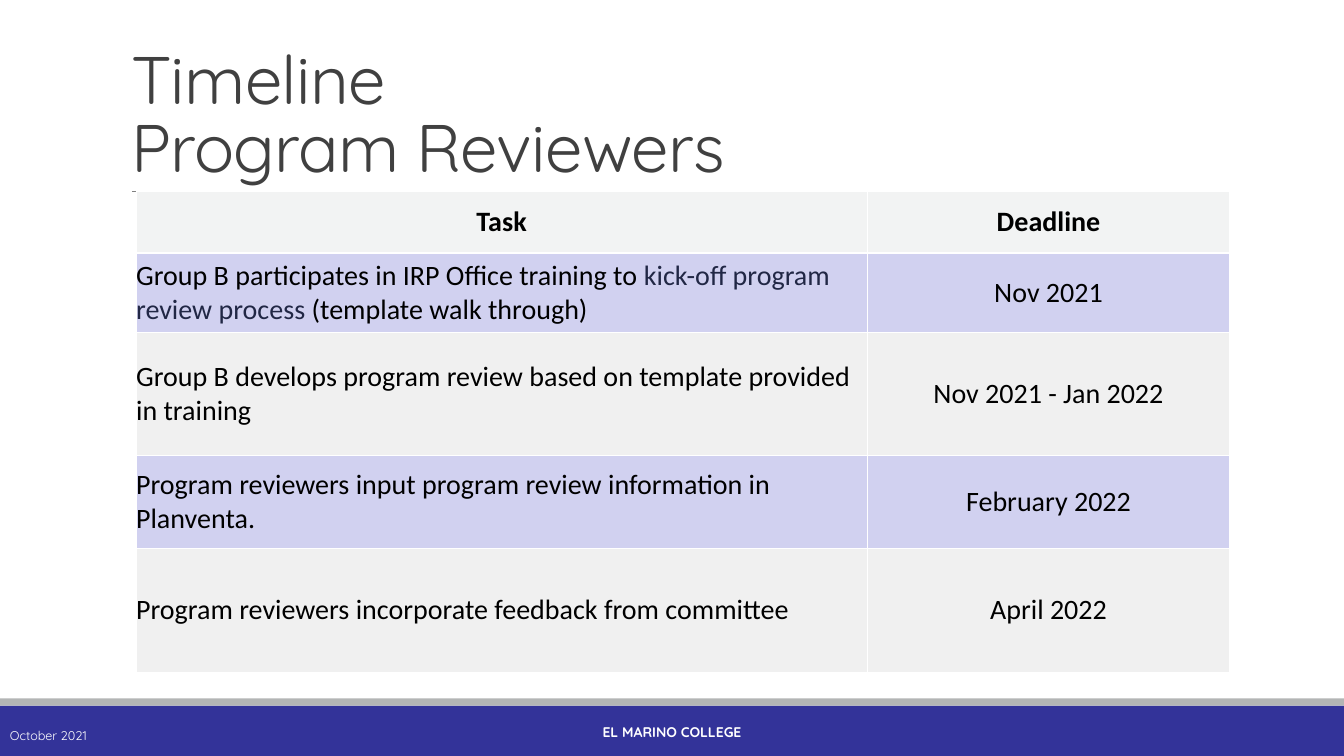
from lxml import etree
from pptx import Presentation
from pptx.dml.color import RGBColor
from pptx.enum import shapes, text
from pptx.oxml import ns
from pptx.util import Inches, Pt

BLACK = RGBColor(0x00, 0x00, 0x00)
WHITE = RGBColor(0xFF, 0xFF, 0xFF)
NAVY = RGBColor(0x21, 0x27, 0x45)
INDIGO = RGBColor(0x33, 0x33, 0x99)
SILVER = RGBColor(0xB3, 0xB5, 0xB5)
GRAY = RGBColor(0x80, 0x80, 0x80)
CHARCOAL = RGBColor(0x40, 0x40, 0x40)
HEADER = RGBColor(0xF2, 0xF3, 0xF3)
LILAC = RGBColor(0xD1, 0xD1, 0xF0)
PALE = RGBColor(0xF0, 0xF0, 0xF0)

CENTER = text.PP_ALIGN.CENTER
LEFT = text.PP_ALIGN.LEFT
MIDDLE = text.MSO_ANCHOR.MIDDLE

TITLE = "Timeline\vProgram Reviewers"
BANDS = [((0, 7, 13.33, 0.5), INDIGO), ((0, 6.93, 13.33, 0.07), SILVER)]
FOOTERS = [
    ("October 2021", (0, 7.1, 2.7, 0.4), 9, False, LEFT),
    ("EL MARINO COLLEGE", (4.03, 7.06, 5.27, 0.4), 10, True, CENTER),
]
COLUMNS = [7.25, 3.6]
ROWS = [
    (0.61, [("Task", BLACK)], "Deadline"),
    (0.79, [("Group B participates in IRP Office training to ", BLACK),
            ("kick-off program review process ", NAVY),
            ("(template walk through)", BLACK)], "Nov 2021"),
    (1.22, [("Group B develops program review based on template "
             "provided in training", BLACK)], "Nov 2021 - Jan 2022"),
    (0.92, [("Program reviewers input program review information in "
             "Planventa.", BLACK)], "February 2022"),
    (1.23, [("Program reviewers incorporate feedback from committee", BLACK)],
     "April 2022"),
]


def style(p, name, size, color, bold=False, align=LEFT):
    p.alignment = align
    p.font.name, p.font.size, p.font.bold = name, Pt(size), bold
    p.font.color.rgb = color


def add_frame(s):
    for box, color in BANDS:
        sp = s.shapes.add_shape(shapes.MSO_SHAPE.RECTANGLE, *map(Inches, box))
        sp.shadow.inherit = False
        sp.fill.solid()
        sp.fill.fore_color.rgb = color
        sp.line.fill.background()
    rule = s.shapes.add_connector(
        shapes.MSO_CONNECTOR.STRAIGHT, *map(Inches, (1.31, 1.9, 12.21, 1.9)))
    rule.line.color.rgb = GRAY
    rule.line.width = Pt(0.5)
    etree.SubElement(rule._element.spPr, ns.qn("a:effectLst"))
    for label, box, size, bold, align in FOOTERS:
        tf = s.shapes.add_textbox(*map(Inches, box)).text_frame
        tf.word_wrap = True
        tf.vertical_anchor = MIDDLE
        tf.text = label
        style(tf.paragraphs[0], "Quicksand", size, WHITE, bold, align)


def set_title(sp):
    sp.left, sp.top, sp.width, sp.height = map(Inches, (1.2, 0.31, 11, 1.59))
    tf = sp.text_frame
    tf.text = TITLE
    tf.auto_size = text.MSO_AUTO_SIZE.NONE
    tf.vertical_anchor = text.MSO_ANCHOR.BOTTOM
    p = tf.paragraphs[0]
    style(p, "Quicksand", 48, CHARCOAL)
    p.line_spacing = 0.85
    for r in p.runs:
        r._r.get_or_add_rPr().set("spc", "-50")


def fill_cell(cell, parts, fill, bold, align):
    tc_pr = cell._tc.get_or_add_tcPr()
    for side in ("lnL", "lnR", "lnT", "lnB"):
        ln = etree.SubElement(tc_pr, ns.qn(f"a:{side}"), w=str(Pt(1)))
        solid = etree.SubElement(ln, ns.qn("a:solidFill"))
        etree.SubElement(solid, ns.qn("a:srgbClr"), val=str(WHITE))
    cell.fill.solid()
    cell.fill.fore_color.rgb = fill
    cell.margin_left = cell.margin_right = 0
    cell.margin_top = cell.margin_bottom = 0
    cell.vertical_anchor = MIDDLE
    p = cell.text_frame.paragraphs[0]
    style(p, "Calibri", 20, BLACK, bold, align)
    for words, color in parts:
        r = p.add_run()
        r.text = words
        r.font.color.rgb = color


def add_timeline(s):
    height = sum(row[0] for row in ROWS)
    table = s.shapes.add_table(
        len(ROWS), len(COLUMNS),
        *map(Inches, (1.35, 1.9, sum(COLUMNS), height))).table
    for column, width in zip(table.columns, COLUMNS):
        column.width = Inches(width)
    for i, (row_height, task, deadline) in enumerate(ROWS):
        table.rows[i].height = Inches(row_height)
        head = i == 0
        fill = HEADER if head else LILAC if i % 2 else PALE
        fill_cell(table.cell(i, 0), task, fill, head, CENTER if head else LEFT)
        fill_cell(table.cell(i, 1), [(deadline, BLACK)], fill, head, CENTER)


def main():
    """Build the program reviewers' timeline slide."""
    prs = Presentation()
    prs.slide_width, prs.slide_height = Inches(13.33), Inches(7.5)
    s = prs.slides.add_slide(prs.slide_layouts[5])
    set_title(s.shapes.title)
    add_frame(s)
    add_timeline(s)
    prs.save("out.pptx")


if __name__ == "__main__":
    main()
